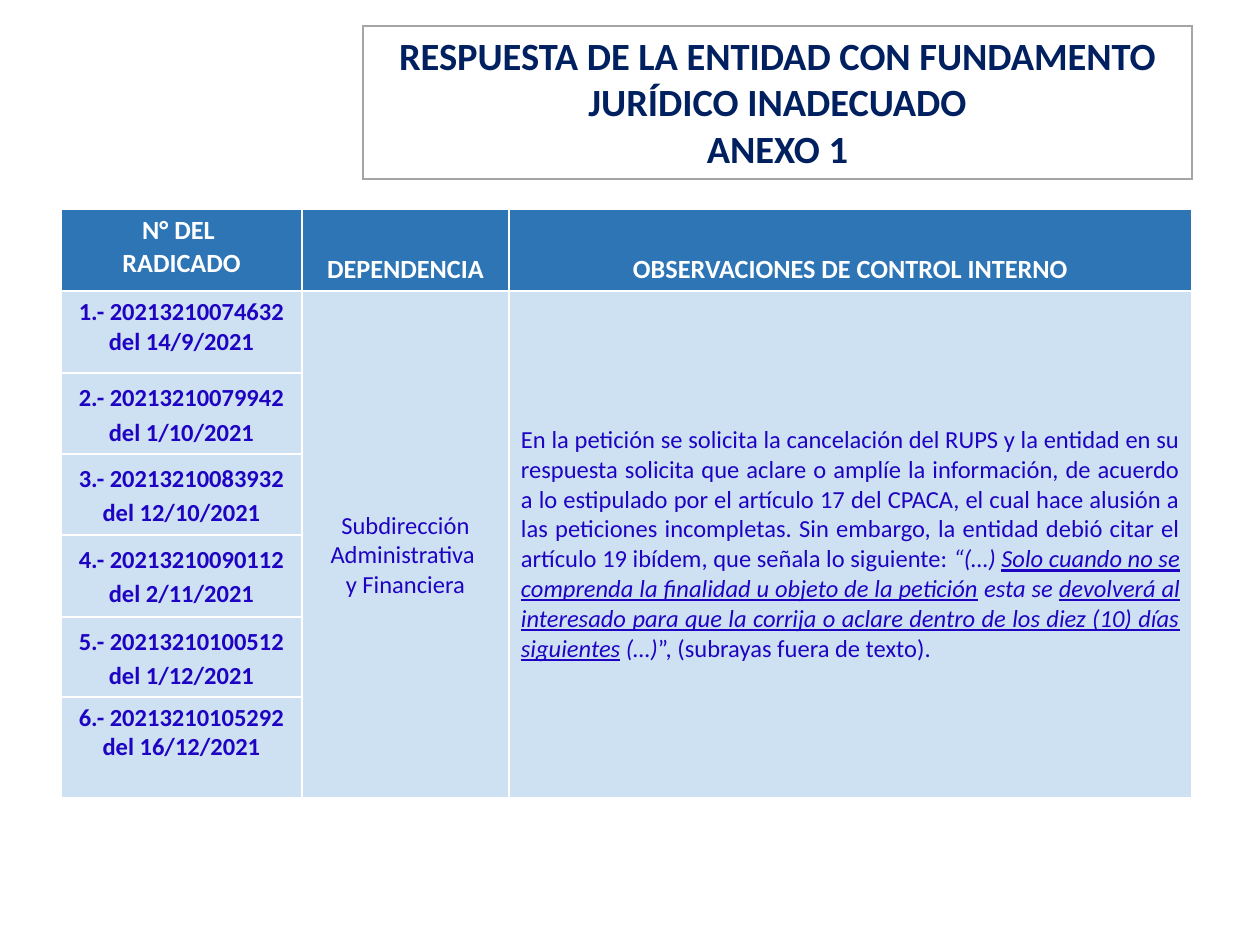
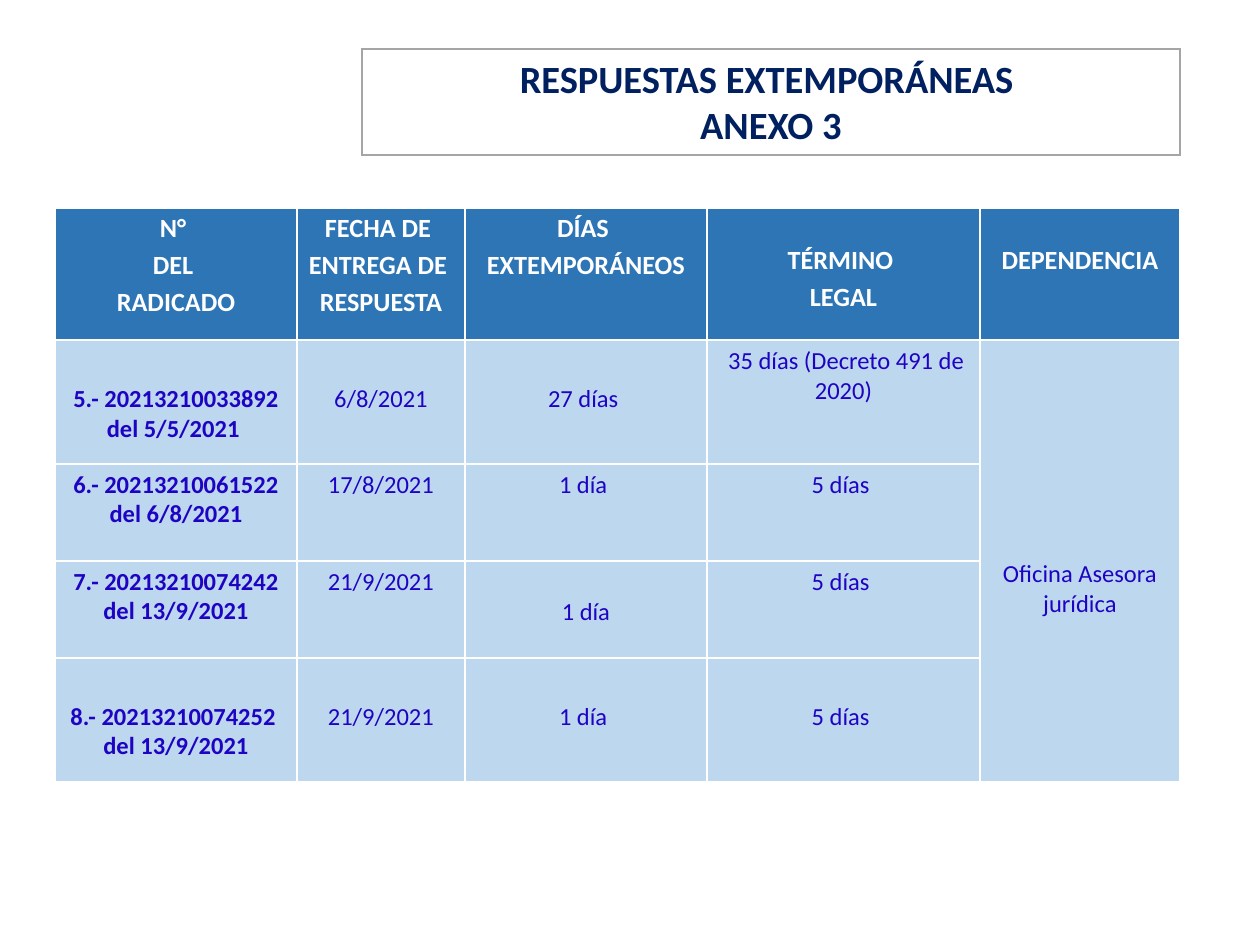
from dataclasses import dataclass

from lxml.etree import SubElement
from pptx import Presentation
from pptx.dml.color import RGBColor
from pptx.enum.shapes import MSO_SHAPE
from pptx.enum.text import MSO_ANCHOR, PP_ALIGN
from pptx.oxml.ns import qn
from pptx.util import Emu, Pt

EMU_PER_PX = 914400 / 126


@dataclass(frozen=True)
class Theme:
    font: str = "Calibri"
    white: str = "FFFFFF"
    navy: str = "002060"
    gray: str = "A5A5A5"
    header: str = "2E75B6"
    body: str = "BDD7EE"
    ink: str = "1E03C3"
    title_size: int = 22
    header_size: int = 15
    body_size: int = 14
    line_width: int = 1


def px(n):
    return Emu(round(n * EMU_PER_PX))


def rgb(color):
    return RGBColor.from_string(color)


def put_text(tf, text, *, font, size, color, bold=False,
             align=PP_ALIGN.CENTER, spacing=None):
    paragraphs = text.split("\n") if isinstance(text, str) else [text]
    for i, content in enumerate(paragraphs):
        p = tf.paragraphs[0] if i == 0 else tf.add_paragraph()
        p.alignment = align
        if spacing:
            p.line_spacing = spacing
        runs = [(content, "")] if isinstance(content, str) else content
        for run_text, marks in runs:
            r = p.add_run()
            r.text = run_text
            r.font.name = font
            r.font.size = Pt(size)
            r.font.bold = bold
            r.font.italic = "i" in marks
            r.font.underline = "u" in marks
            r.font.color.rgb = rgb(color)


class Deck:
    def __init__(self, theme):
        self.theme = theme
        self.prs = Presentation()
        self.prs.slide_width = px(1260)
        self.prs.slide_height = px(945)
        self.s = None

    def slide(self):
        self.s = self.prs.slides.add_slide(self.prs.slide_layouts[6])

    def title(self, text, x, y, w, h):
        t = self.theme
        sp = self.s.shapes.add_shape(MSO_SHAPE.RECTANGLE, px(x), px(y), px(w), px(h))
        sp.shadow.inherit = False
        sp.fill.solid()
        sp.fill.fore_color.rgb = rgb(t.white)
        sp.line.color.rgb = rgb(t.gray)
        sp.line.width = Pt(t.line_width)
        SubElement(sp.line._get_or_add_ln(), qn("a:miter"), lim="800000")
        tf = sp.text_frame
        tf.word_wrap = True
        tf.vertical_anchor = MSO_ANCHOR.MIDDLE
        tf.margin_bottom = px(8)
        put_text(tf, text, font=t.font, size=t.title_size, color=t.navy, bold=True)

    def table(self, x, y, cols, rows):
        frame = self.s.shapes.add_table(len(rows), len(cols), px(x), px(y),
                                        px(sum(cols)), px(sum(rows)))
        tbl = frame.table
        tbl.first_row = tbl.horz_banding = False
        for col, w in zip(tbl.columns, cols):
            col.width = px(w)
        for row, h in zip(tbl.rows, rows):
            row.height = px(h)
        return tbl

    def paint(self, tbl, alpha=None):
        t = self.theme
        for i, row in enumerate(tbl.rows):
            for cell in row.cells:
                tcPr = cell._tc.get_or_add_tcPr()
                for side in ("lnL", "lnR", "lnT", "lnB"):
                    ln = SubElement(tcPr, qn(f"a:{side}"), w=str(Pt(t.line_width)))
                    fill = SubElement(ln, qn("a:solidFill"))
                    SubElement(fill, qn("a:srgbClr"), val=t.white)
                cell.fill.solid()
                cell.fill.fore_color.rgb = rgb(t.body if i else t.header)
                if i and alpha:
                    clr = tcPr.find(qn("a:solidFill")).find(qn("a:srgbClr"))
                    SubElement(clr, qn("a:alpha"), val=str(alpha * 1000))

    def cell(self, cell, text, top=6, side=12, anchor=MSO_ANCHOR.TOP, **fmt):
        t = self.theme
        cell.margin_left = cell.margin_right = px(side)
        cell.margin_top = px(top)
        cell.margin_bottom = 0
        cell.vertical_anchor = anchor
        style = dict(font=t.font, size=t.body_size, color=t.ink)
        put_text(cell.text_frame, text, **(style | fmt))

    def header(self, cell, text, **fmt):
        t = self.theme
        self.cell(cell, text, size=t.header_size, color=t.white, bold=True, **fmt)

    def merged(self, tbl, col, text, top=0, **fmt):
        first = tbl.cell(1, col)
        first.merge(tbl.cell(len(tbl.rows) - 1, col))
        self.cell(first, text, top=top, anchor=MSO_ANCHOR.MIDDLE, **fmt)


OBSERVATION = [
    ("En la petición se solicita la cancelación del RUPS y la entidad en su respuesta "
     "solicita que aclare o amplíe la información, de acuerdo a lo estipulado por el "
     "artículo 17 del CPACA, el cual hace alusión a las peticiones incompletas. Sin "
     "embargo, la entidad debió citar el artículo 19 ibídem, que señala lo siguiente: ", ""),
    ("“(…) ", "i"),
    ("Solo cuando no se comprenda la finalidad u objeto de la petición", "iu"),
    (" esta se ", "i"),
    ("devolverá al interesado para que la corrija o aclare dentro de los diez (10) "
     "días siguientes", "iu"),
    (" (…)", "i"),
    ("”, (subrayas fuera de texto).", ""),
]


def annex_1(deck):
    deck.slide()
    deck.title("RESPUESTA DE LA ENTIDAD CON FUNDAMENTO JURÍDICO INADECUADO\nANEXO 1",
               363, 26, 829, 153)
    tbl = deck.table(61, 209, [241, 207, 683], [82, 82, 81, 81, 82, 80, 101])
    deck.paint(tbl, alpha=73)
    headings = [("N° DEL \nRADICADO", 6), ("DEPENDENCIA", 45),
                ("OBSERVACIONES DE CONTROL INTERNO", 45)]
    for j, (text, top) in enumerate(headings):
        deck.header(tbl.cell(0, j), text, top=top)
    filings = [("20213210074632", "14/9/2021"), ("20213210079942", "1/10/2021"),
               ("20213210083932", "12/10/2021"), ("20213210090112", "2/11/2021"),
               ("20213210100512", "1/12/2021"), ("20213210105292", "16/12/2021")]
    for i, (number, date) in enumerate(filings, 1):
        spacing = None if i in (1, len(filings)) else 1.15
        deck.cell(tbl.cell(i, 0), f"{i}.- {number}\ndel {date}", bold=True, spacing=spacing)
    deck.merged(tbl, 1, "Subdirección Administrativa \ny Financiera", top=22)
    deck.merged(tbl, 2, OBSERVATION, align=PP_ALIGN.JUSTIFY)


def annex_3(deck):
    deck.slide()
    deck.title("RESPUESTAS EXTEMPORÁNEAS \nANEXO 3", 362, 49, 818, 106)
    tbl = deck.table(55, 208, [242, 168, 242, 273, 200], [132, 124, 97, 97, 124])
    deck.paint(tbl)
    headings = [("N° \nDEL \nRADICADO", 0), ("FECHA DE \nENTREGA DE \nRESPUESTA", 0),
                ("DÍAS \nEXTEMPORÁNEOS", 0), ("TÉRMINO \nLEGAL", 32), ("DEPENDENCIA", 32)]
    for j, (text, top) in enumerate(headings):
        deck.header(tbl.cell(0, j), text, top=top, side=9, spacing=1.15)
    high, mid, low = 6, 36, 44
    answers = [
        (("5.- 20213210033892 del 5/5/2021 ", low), ("6/8/2021", low),
         ("27 días ", low), (" 35 días (Decreto 491 de 2020)", high)),
        (("6.- 20213210061522\ndel 6/8/2021", high), ("17/8/2021", high),
         ("1 día ", high), ("5 días ", high)),
        (("7.- 20213210074242\ndel 13/9/2021", high), ("21/9/2021", high),
         ("1 día", mid), ("5 días ", high)),
        (("8.- 20213210074252 \ndel 13/9/2021", low), ("21/9/2021", low),
         ("1 día ", low), ("5 días ", low)),
    ]
    for i, answer in enumerate(answers, 1):
        for j, (text, top) in enumerate(answer):
            deck.cell(tbl.cell(i, j), text, top=top, bold=j == 0)
    deck.merged(tbl, 4, "Oficina Asesora jurídica", top=56)


def main():
    deck = Deck(Theme())
    annex_1(deck)
    annex_3(deck)
    deck.prs.save("out.pptx")


if __name__ == "__main__":
    main()
